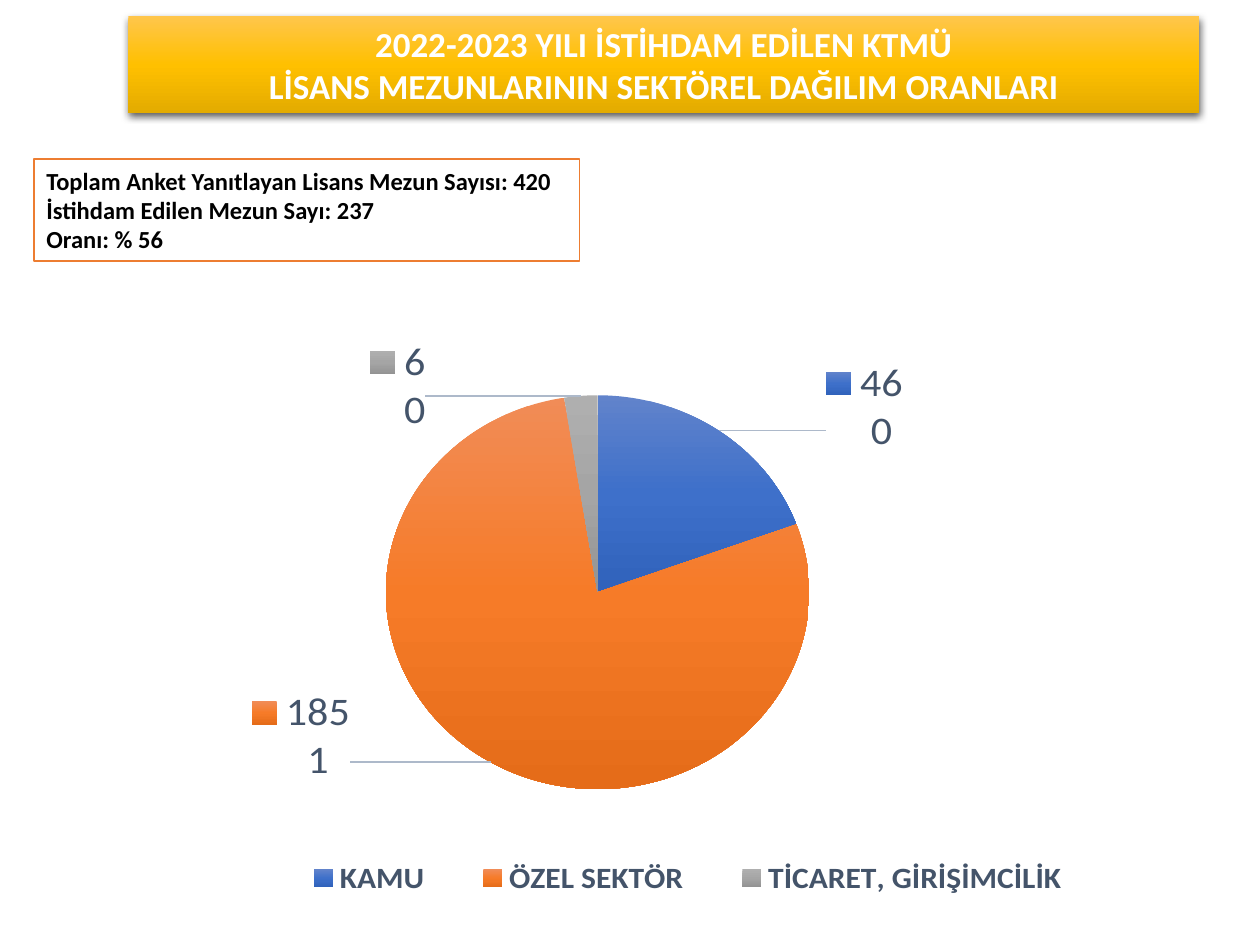
from copy import deepcopy
from pptx import Presentation
from pptx import util as u
from pptx.chart.data import CategoryChartData
from pptx.dml.color import RGBColor
from pptx.enum import chart as ch, shapes, text
from pptx.oxml import parse_xml
from pptx.oxml.ns import nsdecls, qn

TITLE = ["2022-2023 YILI İSTİHDAM EDİLEN KTMÜ",
         "LİSANS MEZUNLARININ SEKTÖREL DAĞILIM ORANLARI"]
SUMMARY = ["Toplam Anket Yanıtlayan Lisans Mezun Sayısı: 420",
           "İstihdam Edilen Mezun Sayı: 237",
           "Oranı: % 56"]
SECTORS = [
    ("KAMU", 46, ("6183CB", "3E70CA", "3062BB"), (0.09, 0.05)),
    ("ÖZEL SEKTÖR", 185, ("F18C57", "F67B28", "E56C19"), (-0.12, -0.13)),
    ("TİCARET, GİRİŞİMCİLİK", 6, ("AFAFAF", "A5A5A5", "939393"), (-0.16, 0.06)),
]
THEME = dict(font="Calibri", white="FFFFFF", black="000000", slate="44546A",
             leader="ADB9CA", border="ED7D31", banner=("FFC64B", "FFC000", "E3AB00"),
             title=20, summary=14, label=24, legend=18)
BOXES = dict(title=(73.4, 9.4, 612, 55.4), summary=(19.4, 90.7, 311.8, 58.3),
             chart=(31, 167.8, 652.3, 372.2))
PLOT = (0.268, 0.093, 0.416, 0.65)
LEGEND = (0.185, 0.85, 0.74, 0.08)


def rgb(name):
    return RGBColor.from_string(THEME[name])


def box(name):
    return [u.Pt(v) for v in BOXES[name]]


def style(font, size, color, bold=False):
    font.name, font.size, font.bold = THEME["font"], u.Pt(THEME[size]), bold
    font.color.rgb = rgb(color)


def write(sp, lines, size, color, align):
    tf = sp.text_frame
    tf.word_wrap = True
    tf.auto_size = text.MSO_AUTO_SIZE.NONE
    tf.vertical_anchor = text.MSO_ANCHOR.MIDDLE
    tf.text = "\n".join(lines)
    for p in tf.paragraphs:
        p.alignment = align
        style(p.font, size, color, True)


def gradient(fill, colors):
    fill.gradient()
    xml = "".join(f'<a:gs pos="{i * 50000}"><a:srgbClr val="{c}"/></a:gs>'
                  for i, c in enumerate(colors))
    grad = fill._xPr.find(qn("a:gradFill"))
    stops = grad.find(qn("a:gsLst"))
    grad.replace(stops, parse_xml(f'<a:gsLst {nsdecls("a")}>{xml}</a:gsLst>'))
    grad.find(qn("a:lin")).set("ang", "5400000")


def layout(values, modes=""):
    xml = modes + "".join(f'<c:{k} val="{v}"/>' for k, v in zip("xywh", values))
    return parse_xml(f'<c:layout {nsdecls("c")}><c:manualLayout>{xml}'
                     '</c:manualLayout></c:layout>')


def add_labels(series):
    labels = series.data_labels
    labels.show_value = labels.show_percentage = labels.show_legend_key = True
    labels.number_format, labels.number_format_is_linked = "0", False
    labels.position = ch.XL_LABEL_POSITION.OUTSIDE_END
    style(labels.font, "label", "slate")
    el = labels._element
    for tag in ("c:showLeaderLines", "c:leaderLines"):
        for old in el.findall(qn(tag)):
            el.remove(old)
    el.append(parse_xml(f'<c:separator {nsdecls("c")}>\n</c:separator>'))
    shared = list(el)
    for i, (*_, offset) in enumerate(SECTORS):
        label = parse_xml(f'<c:dLbl {nsdecls("c")}><c:idx val="{i}"/></c:dLbl>')
        label.append(layout(offset))
        label.extend(deepcopy(shared))
        el.insert(i, label)
    el.append(parse_xml(f'<c:showLeaderLines {nsdecls("c")} val="1"/>'))
    el.append(parse_xml(
        f'<c:leaderLines {nsdecls("c", "a")}><c:spPr><a:ln w="9525"><a:solidFill>'
        f'<a:srgbClr val="{THEME["leader"]}"/></a:solidFill></a:ln></c:spPr></c:leaderLines>'))


def add_pie(s):
    data = CategoryChartData()
    data.categories = [sector[0] for sector in SECTORS]
    data.add_series("Series 1", [sector[1] for sector in SECTORS])
    chart = s.shapes.add_chart(ch.XL_CHART_TYPE.PIE, *box("chart"), data).chart
    chart.has_title = False
    chart.font.name, chart.font.size = THEME["font"], u.Pt(10)
    plot = chart.plots[0]
    plot.vary_by_categories = True
    series = plot.series[0]
    for i, (_, _, colors, _) in enumerate(SECTORS):
        gradient(series.points[i].format.fill, colors)
    add_labels(series)

    area = chart._chartSpace.chart.plotArea
    for old in area.findall(qn("c:layout")):
        area.remove(old)
    edges = '<c:xMode val="edge"/><c:yMode val="edge"/>'
    area.insert(0, layout(PLOT, '<c:layoutTarget val="inner"/>' + edges))

    chart.has_legend = True
    legend = chart.legend
    legend.position = ch.XL_LEGEND_POSITION.BOTTOM
    legend.include_in_layout = False
    style(legend.font, "legend", "slate", True)
    el = legend._element
    for old in el.findall(qn("c:layout")):
        el.remove(old)
    el.find(qn("c:legendPos")).addnext(layout(LEGEND, edges))


def main():
    prs = Presentation()
    prs.slide_width, prs.slide_height = u.Pt(720), u.Pt(540)
    s = prs.slides.add_slide(prs.slide_layouts[5])

    title = s.shapes.title
    title.left, title.top, title.width, title.height = box("title")
    gradient(title.fill, THEME["banner"])
    title._element.spPr.append(parse_xml(
        f'<a:effectLst {nsdecls("a")}><a:outerShdw blurRad="57150" dist="19050" '
        'dir="5400000" algn="ctr" rotWithShape="0"><a:srgbClr val="000000">'
        '<a:alpha val="63000"/></a:srgbClr></a:outerShdw></a:effectLst>'))
    write(title, TITLE, "title", "white", text.PP_ALIGN.CENTER)

    add_pie(s)

    sp = s.shapes.add_shape(shapes.MSO_SHAPE.RECTANGLE, *box("summary"))
    sp.shadow.inherit = False
    sp.fill.solid()
    sp.fill.fore_color.rgb = rgb("white")
    sp.line.color.rgb = rgb("border")
    sp.line.width = u.Pt(1)
    write(sp, SUMMARY, "summary", "black", text.PP_ALIGN.LEFT)

    prs.save("out.pptx")


if __name__ == "__main__":
    main()
